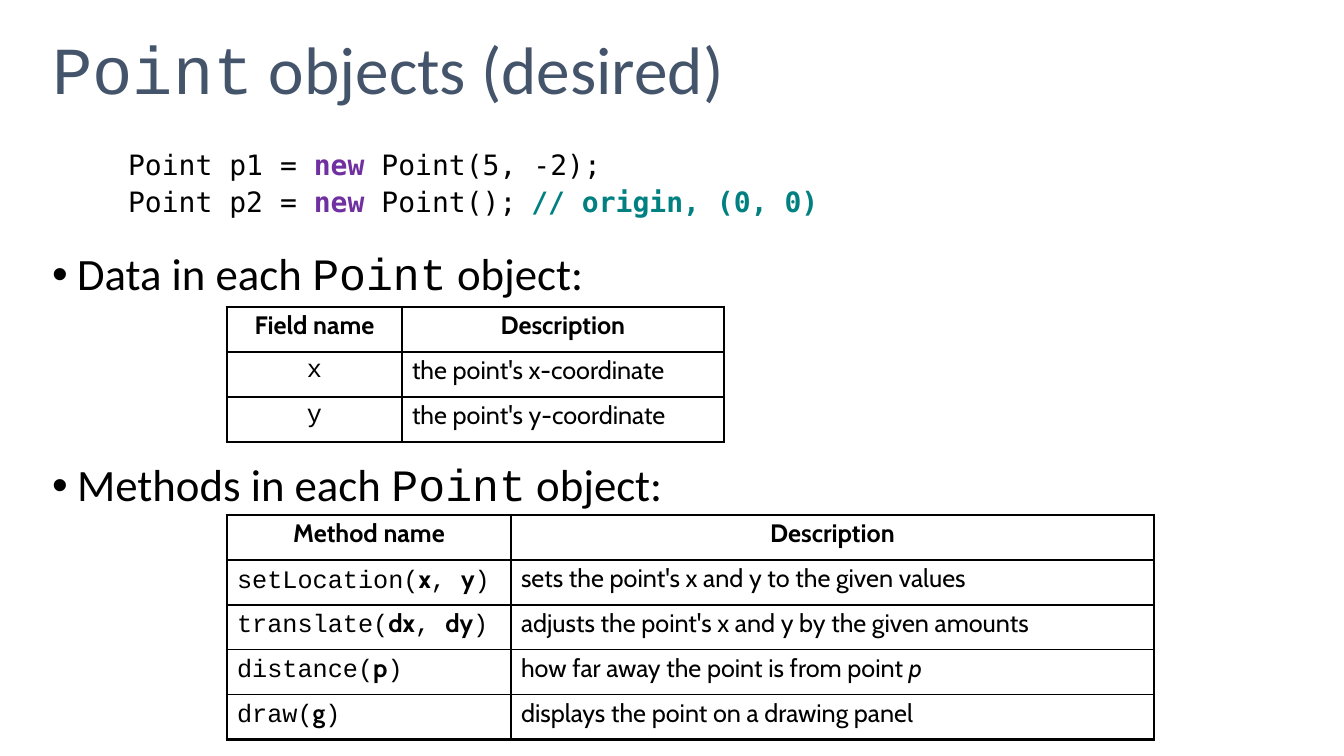
import pptx
import pptx.util
import pptx.dml.color
import pptx.enum.text
import pptx.oxml
import lxml.etree

PX = 914400 / 100.8
NS = "http://schemas.openxmlformats.org/drawingml/2006/main"
Color = pptx.dml.color.RGBColor.from_string
Align = pptx.enum.text.PP_ALIGN

# Each style is font, size, colour, bold, italic.
THEME = {
    "title": ("Calibri", 48, "44546A", False, False),
    "title mono": ("Courier New", 48, "44546A", False, False),
    "code": ("DejaVu Sans Mono", 20, "000000", False, False),
    "key": ("DejaVu Sans Mono", 20, "7030A0", True, False),
    "note": ("DejaVu Sans Mono", 20, "008080", True, False),
    "list": ("Calibri", 32, "000000", False, False),
    "list mono": ("Courier New", 32, "000000", False, False),
    "cell": ("Cabin", 18, "000000", False, False),
    "bold": ("Cabin", 18, "000000", True, False),
    "slant": ("Cabin", 18, "000000", False, True),
    "mono": ("Courier New", 18, "000000", False, False),
    "line": "000000",
    "fill": "FFFFFF",
}


def px(n):
    return pptx.util.Emu(round(n * PX))


def write(para, runs, before, align=Align.LEFT):
    """Fill a paragraph with (style, text) runs and set its spacing."""
    para.alignment = align
    para.line_spacing = 0.9
    para.space_before = pptx.util.Pt(before)
    for style, text in runs:
        run = para.add_run()
        run.text = text
        face, size, color, bold, slant = THEME[style]
        font = run.font
        font.name, font.size = face, pptx.util.Pt(size)
        font.bold, font.italic = bold, slant
        font.color.rgb = Color(color)


deck = pptx.Presentation()
deck.slide_width, deck.slide_height = px(1344), px(756)
slide = deck.slides.add_slide(deck.slide_layouts[1])

# Title and body
title, body = slide.placeholders
for holder, top, height, anchor in (
    (title, 0, 146, pptx.enum.text.MSO_ANCHOR.MIDDLE),
    (body, 146, 571, pptx.enum.text.MSO_ANCHOR.TOP),
):
    holder.left, holder.top = px(42), px(top)
    holder.width, holder.height = px(1260), px(height)
    frame = holder.text_frame
    frame.word_wrap = True
    frame.auto_size = pptx.enum.text.MSO_AUTO_SIZE.NONE
    frame.vertical_anchor = anchor

write(title.text_frame.paragraphs[0],
      [("title mono", "Point"), ("title", " objects (desired)")], 0)

# Body lines: level, space before, runs
lines = [
    (1, 5, [("code", "Point p1 = "), ("key", "new "),
            ("code", "Point(5, -2);")]),
    (1, 5, [("code", "Point p2 = "), ("key", "new "),
            ("code", "Point();\t"), ("note", "// origin, (0, 0)")]),
    (0, 24, [("list", "Data in each "), ("list mono", "Point"),
             ("list", " object:")]),
    (0, 116, [("list", "Methods in each "), ("list mono", "Point"),
              ("list", " object:")]),
]
frame = body.text_frame
for i, (level, before, runs) in enumerate(lines):
    para = frame.add_paragraph() if i else frame.paragraphs[0]
    para.level = level
    write(para, runs, before)
    props = para._p.get_or_add_pPr()
    if level:
        props.set("marL", str(px(76)))
        props.set("indent", "0")
        lxml.etree.SubElement(props, f"{{{NS}}}buNone")
        tabs = lxml.etree.SubElement(props, f"{{{NS}}}tabLst")
        lxml.etree.SubElement(tabs, f"{{{NS}}}tab", pos=str(px(634)), algn="l")
    else:
        props.set("marL", str(px(25)))
        props.set("indent", str(-px(25)))
        lxml.etree.SubElement(props, f"{{{NS}}}buFont", typeface="Arial")
        lxml.etree.SubElement(props, f"{{{NS}}}buChar", char="•")

# Tables: top, column widths, alignment of the first column, rows
fields = [
    ([("bold", "Field name")], [("bold", "Description")]),
    ([("mono", "x")], [("cell", "the point's x-coordinate")]),
    ([("mono", "y")], [("cell", "the point's y-coordinate")]),
]
methods = [
    ([("bold", "Method name")], [("bold", "Description")]),
    ([("mono", "setLocation("), ("bold", "x"), ("mono", ", "),
      ("bold", "y"), ("mono", ")")],
     [("cell", "sets the point's x and y to the given values")]),
    ([("mono", "translate("), ("bold", "dx"), ("mono", ", "),
      ("bold", "dy"), ("mono", ")")],
     [("cell", "adjusts the point's x and y by the given amounts")]),
    ([("mono", "distance("), ("bold", "p"), ("mono", ")")],
     [("cell", "how far away the point is from point "), ("slant", "p")]),
    ([("mono", "draw("), ("bold", "g"), ("mono", ")")],
     [("cell", "displays the point on a drawing panel")]),
]
for top, widths, first, rows in (
    (515, (284, 643), Align.LEFT, methods),
    (307, (175, 322), Align.CENTER, fields),
):
    table = slide.shapes.add_table(
        len(rows), 2, px(227), px(top), px(sum(widths)), px(45 * len(rows))
    ).table
    table.first_row = table.horz_banding = False
    for c, width in enumerate(widths):
        table.columns[c].width = px(width)
    for r, row in enumerate(rows):
        table.rows[r].height = px(45)
        for c, runs in enumerate(row):
            cell = table.cell(r, c)
            align = Align.CENTER if r == 0 else (first, Align.LEFT)[c]
            write(cell.text_frame.paragraphs[0], runs, 3.6, align)
            props = cell._tc.get_or_add_tcPr()
            outer = {"L": c == 0, "R": c == 1,
                     "T": r == 0, "B": r == len(rows) - 1}
            for side, edge in outer.items():
                weight = pptx.util.Pt(2.25 if edge else 1)
                props.append(pptx.oxml.parse_xml(
                    f'<a:ln{side} xmlns:a="{NS}" w="{weight}"><a:solidFill>'
                    f'<a:srgbClr val="{THEME["line"]}"/></a:solidFill>'
                    f'</a:ln{side}>'))
            cell.fill.solid()
            cell.fill.fore_color.rgb = Color(THEME["fill"])

deck.save("out.pptx")
